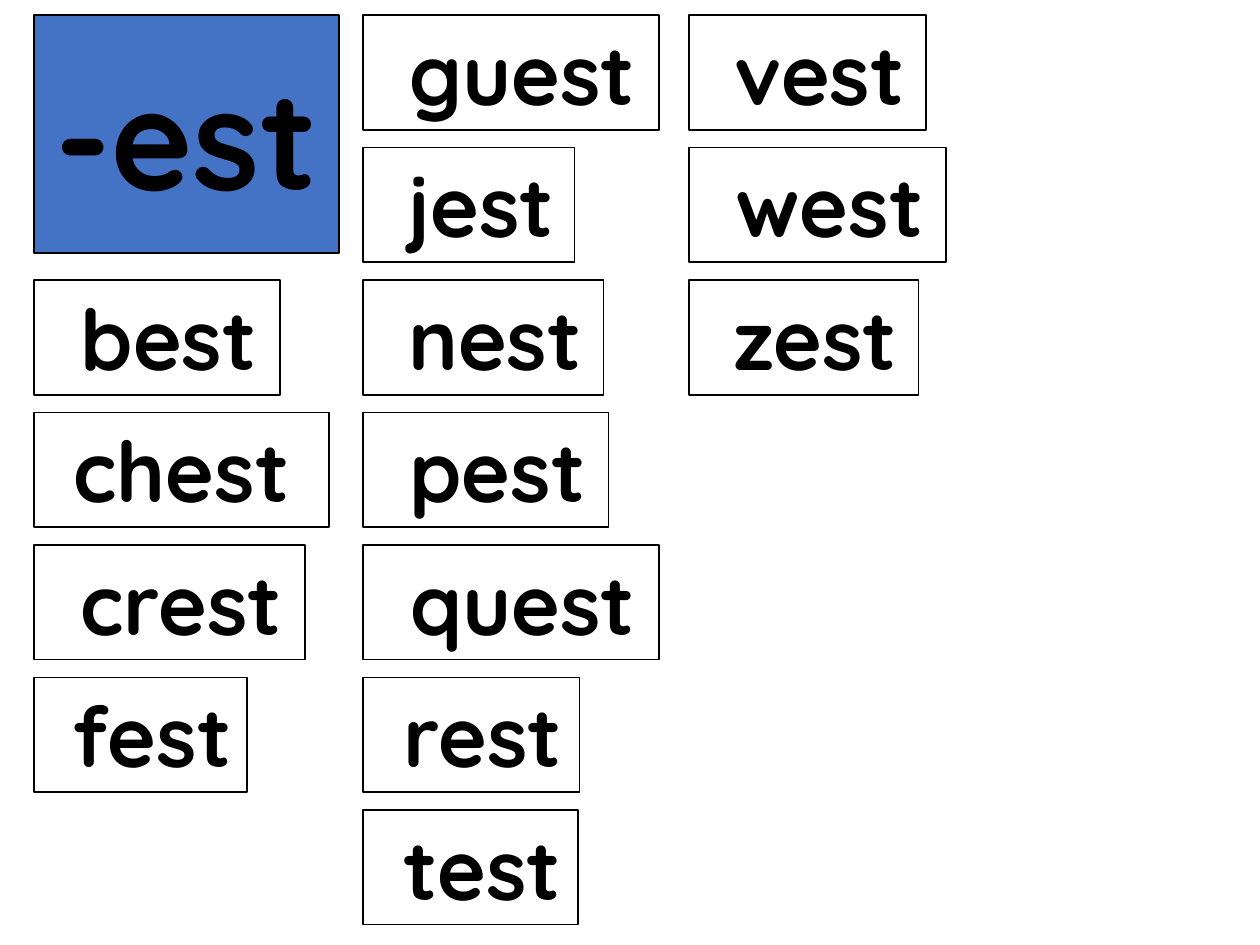
from pptx import Presentation
from pptx.dml.color import RGBColor
from pptx.enum.shapes import MSO_SHAPE
from pptx.enum.text import MSO_ANCHOR, MSO_AUTO_SIZE, PP_ALIGN
from pptx.util import Pt

BLACK, WHITE, BLUE = "000000", "FFFFFF", "4472C4"
TOP, ROW_PITCH, CARD_HEIGHT = 8.64, 75.7, 65.5
WORD_FRAME = {
    "word_wrap": False,
    "auto_size": MSO_AUTO_SIZE.SHAPE_TO_FIT_TEXT,
    "vertical_anchor": MSO_ANCHOR.TOP,
}
ENDING_FRAME = {"word_wrap": True, "vertical_anchor": MSO_ANCHOR.MIDDLE}
COLUMNS = [
    (393.84, 0, {"vest": 135.4, "west": 146.9, "zest": 131}),
    (207.36, 0, {"guest": 169.2, "jest": 121, "nest": 137.5, "pest": 140.4,
                 "quest": 169.2, "rest": 123.8, "test": 123.1}),
    (19.44, 2, {"best": 140.4, "chest": 168.5, "crest": 154.8, "fest": 121.7}),
]


def color(hex_value):
    """Return the colour for a hex string."""
    return RGBColor.from_string(hex_value)


def apply_format(target, values):
    """Set each named attribute on the target."""
    for name, value in values.items():
        setattr(target, name, value)


def add_card(slide, box, text, size, fill, frame_format):
    """Place an outlined card with bold centred text in the box."""
    card = slide.shapes.add_shape(MSO_SHAPE.RECTANGLE, *map(Pt, box))
    card.shadow.inherit = False
    card.fill.solid()
    card.fill.fore_color.rgb = color(fill)
    card.line.color.rgb = color(BLACK)
    card.line.width = Pt(1)
    apply_format(card.text_frame, frame_format)
    paragraph = card.text_frame.paragraphs[0]
    paragraph.alignment = PP_ALIGN.CENTER
    label = paragraph.add_run()
    label.text = text
    apply_format(label.font, {"name": "Quicksand", "size": Pt(size), "bold": True})
    label.font.color.rgb = color(BLACK)


def add_word_column(slide, left, top, words):
    """Stack the word cards downwards from the given corner."""
    for row, (word, width) in enumerate(words.items()):
        box = (left, top + row * ROW_PITCH, width, CARD_HEIGHT)
        add_card(slide, box, f" {word} ", 48, WHITE, WORD_FRAME)


def main():
    """Build the word family slide."""
    deck = Presentation()
    apply_format(deck, {"slide_width": Pt(720), "slide_height": Pt(540)})
    slide = deck.slides.add_slide(deck.slide_layouts[6])
    for left, first_row, words in COLUMNS:
        add_word_column(slide, left, TOP + first_row * ROW_PITCH, words)
    add_card(slide, (19.44, TOP, 174.5, 136), "-est", 80, BLUE, ENDING_FRAME)
    deck.save("out.pptx")


if __name__ == "__main__":
    main()
